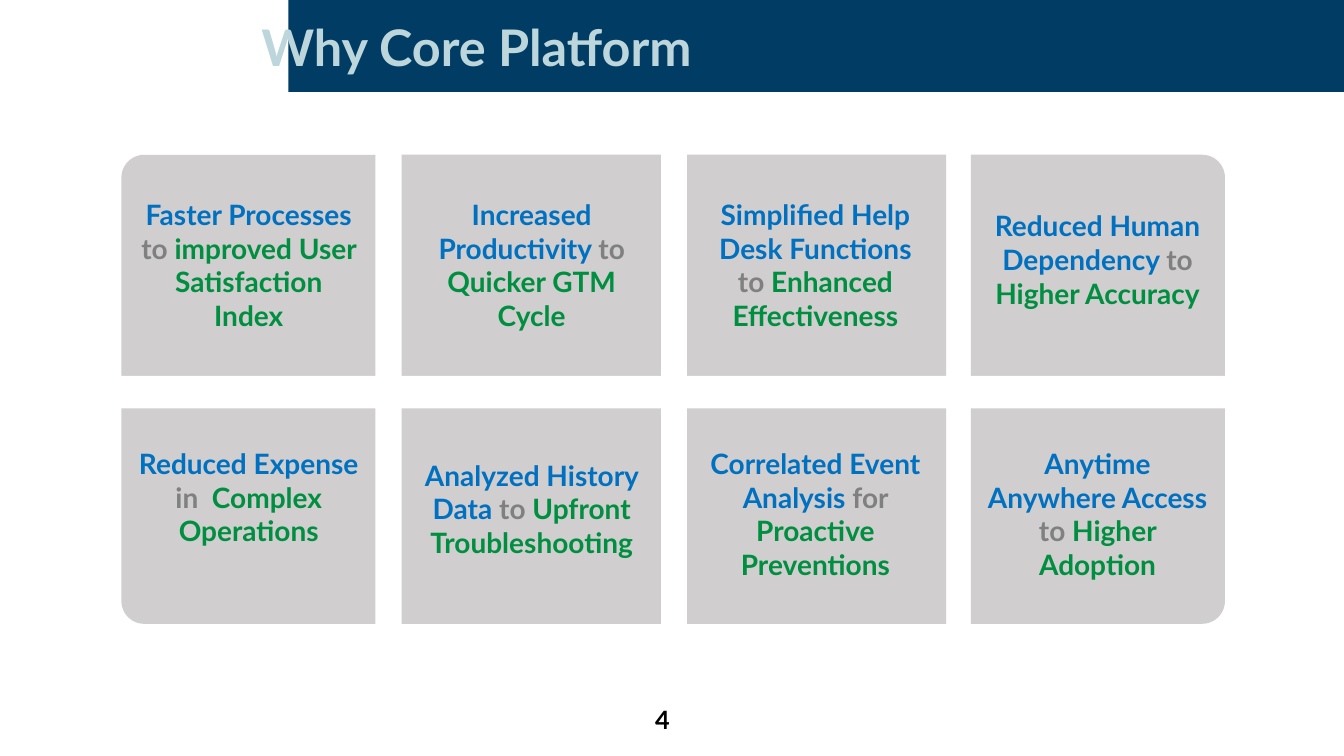
from pptx import Presentation
from pptx.dml.color import RGBColor
from pptx.enum import shapes, text
from pptx.util import Cm, Pt

# Content: (cause, link word, benefit, drop below row top in cm, width in cm)
TITLE = "Why Core Platform"
PAGE = "4"
BENEFITS = [
    [("Faster Processes ", "to ", "improved User Satisfaction Index", 0, 6.12),
     ("Increased Productivity ", "to ", "Quicker GTM Cycle", 0, 6.12),
     ("Simplified Help Desk Functions ", "to ", "Enhanced Effectiveness", 0, 6.12),
     ("Reduced Human Dependency ", "to ", "Higher Accuracy", 0.29, 6.12)],
    [("Reduced Expense ", "in  ", "Complex Operations", 0, 6.12),
     ("Analyzed History Data ", "to ", "Upfront Troubleshooting", 0.29, 6.48),
     ("Correlated Event Analysis ", "for ", "Proactive Preventions", 0, 6.12),
     ("Anytime Anywhere Access ", "to ", "Higher Adoption", 0, 6.12)],
]
COLORS = {"banner": "003C64", "title": "BCD6DC", "panel": "D0CECE", "gap": "FFFFFF",
          "cause": "0070C0", "link": "808080", "benefit": "008E40", "page": "000000"}
FONT = "Lato"

# Layout in cm
COLUMN_CENTERS = [6.27, 13.4, 20.55, 27.66]
ROW_TOPS = [4.85, 11.13]
PANEL_MIDDLE = 9.81
PANEL_LENGTH = 11.82
OUTER_WIDTH, INNER_WIDTH = 6.4, 6.53

deck = Presentation()
deck.slide_width, deck.slide_height = Cm(33.87), Cm(19.05)
slide = deck.slides.add_slide(deck.slide_layouts[5])


def add_block(kind, left, top, width, height, color):
    block = slide.shapes.add_shape(kind, Cm(left), Cm(top), Cm(width), Cm(height))
    block.shadow.inherit = False
    block.fill.solid()
    block.fill.fore_color.rgb = RGBColor.from_string(COLORS[color])
    block.line.fill.background()
    return block


def add_run(paragraph, words, size, color):
    run = paragraph.add_run()
    run.text = words
    run.font.name = FONT
    run.font.size = Pt(size)
    run.font.bold = True
    run.font.color.rgb = RGBColor.from_string(COLORS[color])


def add_text(left, top, width, height):
    frame = slide.shapes.add_textbox(Cm(left), Cm(top), Cm(width), Cm(height)).text_frame
    frame.word_wrap = True
    return frame.paragraphs[0]


# Banner, placed behind the title
banner = add_block(shapes.MSO_SHAPE.RECTANGLE, 7.27, 0, 26.6, 2.32, "banner")
slide.shapes.title.element.addprevious(banner.element)

# Title
title = slide.shapes.title
title.left, title.top, title.width, title.height = Cm(6.33), Cm(0.28), Cm(22.6), Cm(1.8)
title.text_frame.vertical_anchor = text.MSO_ANCHOR.MIDDLE
title.text_frame.paragraphs[0].alignment = text.PP_ALIGN.LEFT
add_run(title.text_frame.paragraphs[0], TITLE, 36, "title")

# Column panels: the outer two are turned so that their round corners face outwards
for center, turn in zip([6.26, 13.39, 20.58, 27.67], [270, None, None, 90]):
    if turn is None:
        add_block(shapes.MSO_SHAPE.RECTANGLE, center - INNER_WIDTH / 2,
                  PANEL_MIDDLE - PANEL_LENGTH / 2, INNER_WIDTH, PANEL_LENGTH, "panel")
    else:
        panel = add_block(shapes.MSO_SHAPE.ROUND_2_SAME_RECTANGLE, center - PANEL_LENGTH / 2,
                          PANEL_MIDDLE - OUTER_WIDTH / 2, PANEL_LENGTH, OUTER_WIDTH, "panel")
        panel.adjustments[0] = 0.09
        panel.rotation = turn

# White strip that splits the panels into two rows
add_block(shapes.MSO_SHAPE.RECTANGLE, 2, 9.47, 30, 0.82, "gap")

# Benefit statements
for top, row in zip(ROW_TOPS, BENEFITS):
    for center, (cause, link, benefit, drop, width) in zip(COLUMN_CENTERS, row):
        statement = add_text(center - width / 2, top + drop, width, 3.68)
        statement.alignment = text.PP_ALIGN.CENTER
        add_run(statement, cause, 20, "cause")
        add_run(statement, link, 20, "link")
        add_run(statement, benefit, 20, "benefit")

# Page number
add_run(add_text(16.26, 17.63, 1.35, 1.02), PAGE, 18, "page")

deck.save("out.pptx")
